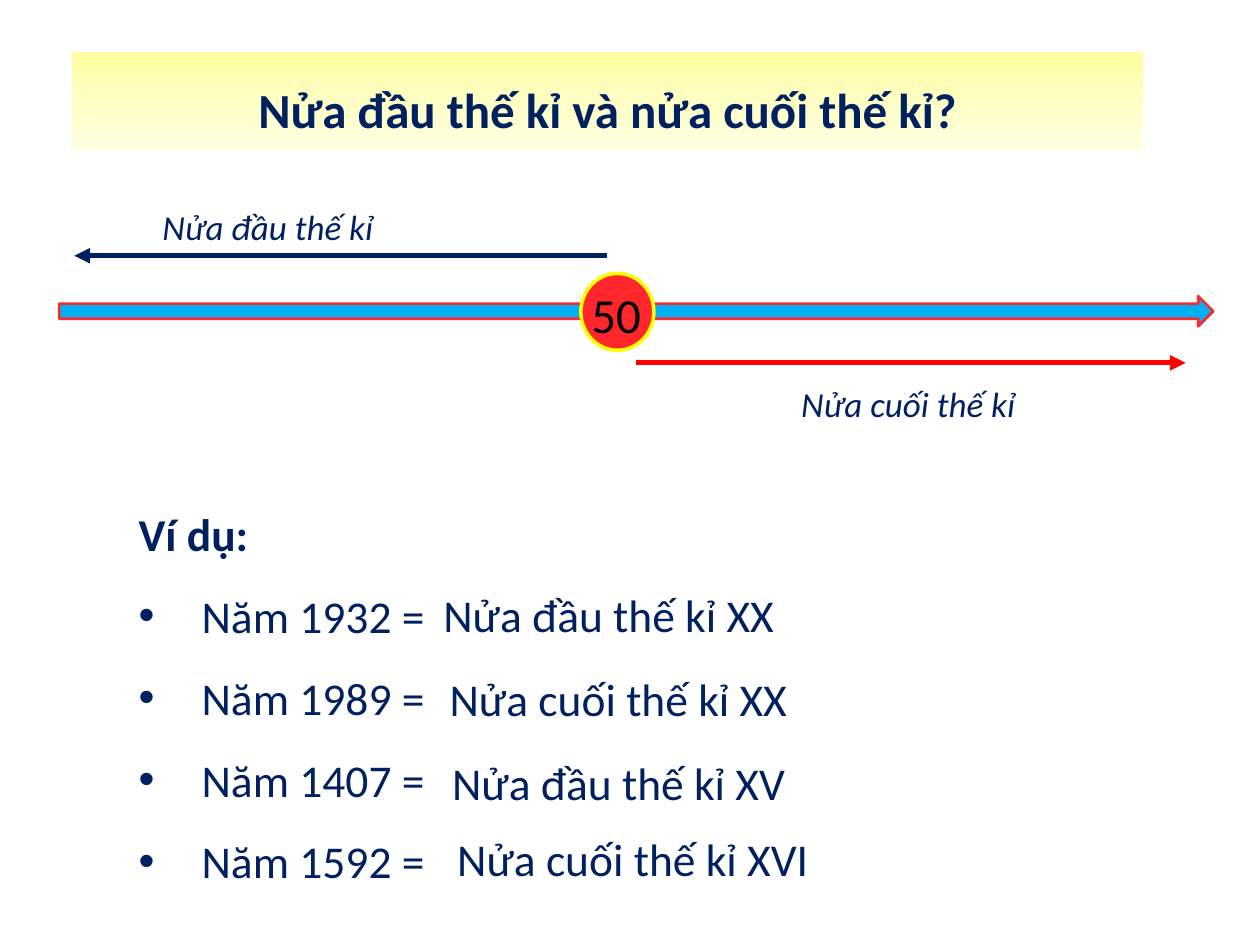
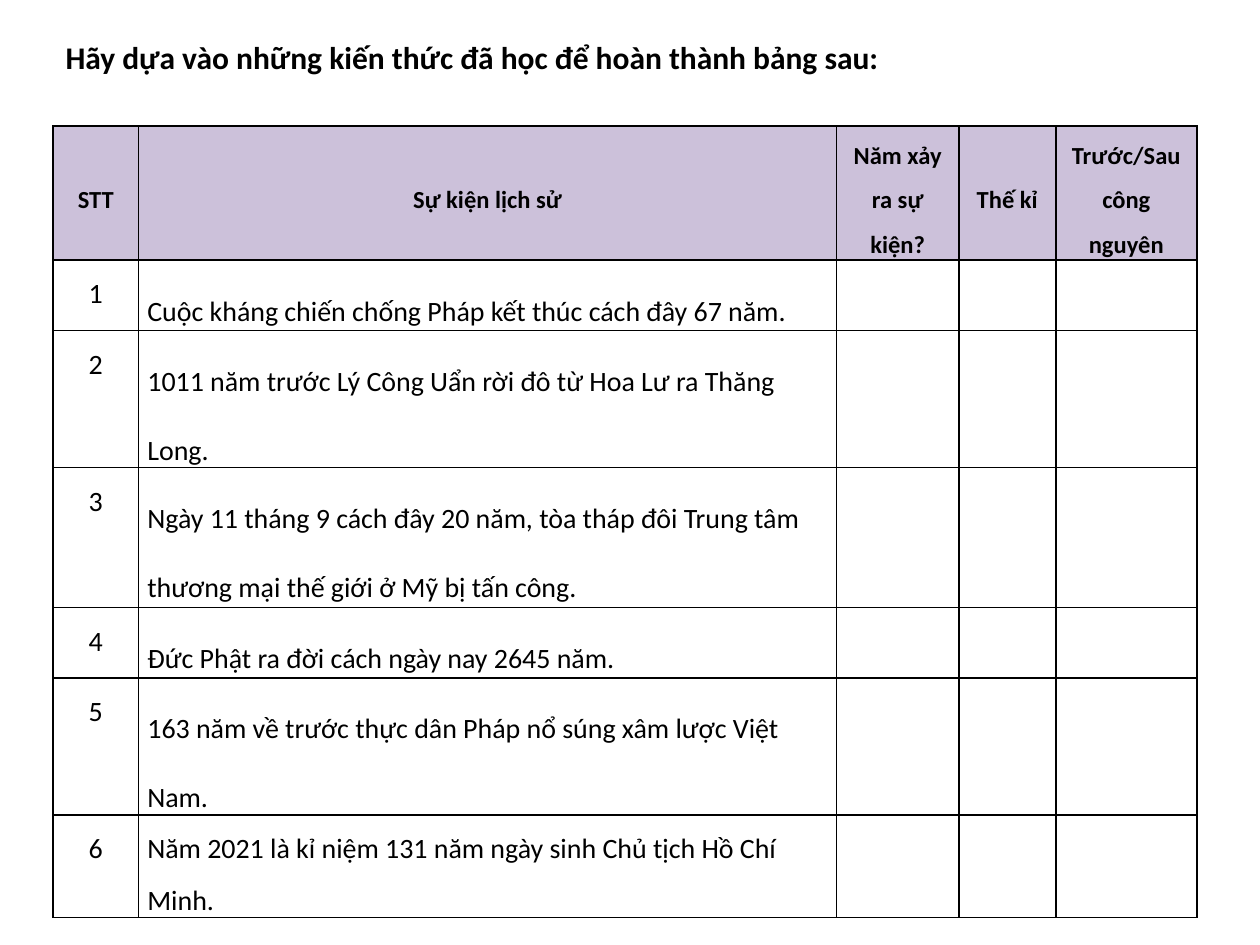
from copy import deepcopy

from pptx import Presentation
from pptx.dml.color import RGBColor
from pptx.enum.shapes import MSO_CONNECTOR as CONN, MSO_SHAPE as SHAPE
from pptx.enum.text import MSO_ANCHOR as ANCHOR, MSO_AUTO_SIZE as AUTO, PP_ALIGN as ALIGN
from pptx.oxml.ns import qn
from pptx.util import Inches, Pt
from lxml.etree import SubElement

FONT = "Calibri"
NAVY = RGBColor(0x00, 0x20, 0x60)
BLACK = RGBColor(0x00, 0x00, 0x00)
RED = RGBColor(0xFF, 0x00, 0x00)
CORAL = RGBColor(0xFF, 0x27, 0x2C)
YELLOW = RGBColor(0xFF, 0xFF, 0x00)
SKY = RGBColor(0x00, 0xB0, 0xF0)
LILAC = RGBColor(0xCC, 0xC1, 0xDA)
BAND = [(0, RGBColor(0xFF, 0xFF, 0xA0)), (0.5, RGBColor(0xFF, 0xFF, 0xC5)),
        (1, RGBColor(0xFF, 0xFF, 0xE3))]

EXAMPLES = [
    ("Năm 1932 =", "Nửa đầu thế kỉ XX", (3.42, 4.39, 2.85, 0.69)),
    ("Năm 1989 =", "Nửa cuối thế kỉ XX", (3.47, 5.06, 2.91, 0.69)),
    ("Năm 1407 =", "Nửa đầu thế kỉ XV", (3.49, 5.73, 2.87, 0.69)),
    ("Năm 1592 =", "Nửa cuối thế kỉ XVI", (3.53, 6.33, 3.02, 0.69)),
]
HEADERS = ["STT", "Sự kiện lịch sử", "Năm xảy ra sự kiện?", "Thế kỉ", "Trước/Sau công nguyên"]
EVENTS = [
    "Cuộc kháng chiến chống Pháp kết thúc cách đây 67 năm.",
    "1011 năm trước Lý Công Uẩn rời đô từ Hoa Lư ra Thăng Long.",
    "Ngày 11 tháng 9 cách đây 20 năm, tòa tháp đôi Trung tâm thương mại thế giới ở Mỹ bị tấn công.",
    "Đức Phật ra đời cách ngày nay 2645 năm.",
    "163 năm về trước thực dân Pháp nổ súng xâm lược Việt Nam.",
    "Năm 2021 là kỉ niệm 131 năm ngày sinh Chủ tịch Hồ Chí Minh.",
]
COL_WIDTHS = [0.68, 5.54, 0.97, 0.77, 1.12]
ROW_HEIGHTS = [0.72, 0.56, 0.56, 1.11, 0.56, 0.56, 0.42]


def style(p, size, color=NAVY, bold=False, italic=False, align=ALIGN.LEFT, spacing=1.0, before=0):
    """Format a paragraph and all its runs."""
    p.alignment, p.line_spacing, p.space_before = align, spacing, Pt(before)
    for r in p.runs:
        f = r.font
        f.name, f.size, f.bold, f.italic = FONT, Pt(size), bold, italic
        f.color.rgb = color


def place(sp, box):
    """Move a shape to a box given in inches."""
    sp.left, sp.top, sp.width, sp.height = map(Inches, box)


def add_title(slide, box, text, anchor, size, **look):
    """Fill, place and format the title placeholder."""
    sp = slide.shapes.title
    place(sp, box)
    tf = sp.text_frame
    tf.text = text
    tf.auto_size, tf.vertical_anchor = AUTO.NONE, anchor
    style(tf.paragraphs[0], size, bold=True, **look)
    return sp


def add_label(slide, box, text, size, **look):
    """Add a one-line text box."""
    tf = slide.shapes.add_textbox(*map(Inches, box)).text_frame
    tf.text = text
    tf.word_wrap, tf.auto_size = False, AUTO.SHAPE_TO_FIT_TEXT
    style(tf.paragraphs[0], size, **look)


def add_figure(slide, kind, box, fill, line, width):
    """Add a filled and outlined preset shape."""
    sp = slide.shapes.add_shape(kind, *map(Inches, box))
    sp.shadow.inherit = False
    sp.fill.solid()
    sp.fill.fore_color.rgb = fill
    sp.line.color.rgb, sp.line.width = line, Pt(width)


def add_arrow(slide, x1, x2, y, color):
    """Add a horizontal arrow pointing at x2."""
    cx = slide.shapes.add_connector(CONN.STRAIGHT, *map(Inches, (x1, y, x2, y)))
    cx.line.color.rgb, cx.line.width = color, Pt(3)
    SubElement(cx.line._get_or_add_ln(), qn("a:tailEnd"), type="triangle")
    SubElement(cx._element.spPr, qn("a:effectLst"))


def fill_band(sp):
    """Give a shape the vertical yellow gradient."""
    sp.fill.gradient()
    sp.fill.gradient_angle = 270
    stops = sp._element.spPr.find(qn("a:gradFill")).find(qn("a:gsLst"))
    stops.append(deepcopy(stops[0]))
    for stop, (position, color) in zip(sp.fill.gradient_stops, BAND):
        stop.position, stop.color.rgb = position, color


def add_timeline(slide, box):
    """Draw the century axis with its midpoint and two labelled halves."""
    x, y, w, h = box
    add_figure(slide, SHAPE.RIGHT_ARROW, box, SKY, CORAL, 1.5)
    add_figure(slide, SHAPE.OVAL, (x + 4.14, y - 0.18, 0.58, 0.61), CORAL, YELLOW, 2)
    add_arrow(slide, x + 4.35, x + 0.12, y - 0.32, NAVY)
    add_arrow(slide, x + 4.58, x + w - 0.22, y + h + 0.29, RED)
    add_label(slide, (x + 0.72, y - 0.77, 1.95, 0.44), "Nửa đầu thế kỉ", 20, italic=True)
    add_label(slide, (x + 5.79, y + 0.64, 1.98, 0.44), "Nửa cuối thế kỉ", 20, italic=True)
    add_label(slide, (x + 4.12, y - 0.14, 0.6, 0.57), "50", 28, color=BLACK, align=ALIGN.CENTER)


def add_examples(slide, box):
    """List the example years in the body placeholder and add their answers."""
    sp = slide.placeholders[1]
    place(sp, box)
    tf = sp.text_frame
    tf.auto_size = AUTO.NONE
    tf.text = "\n".join(["Ví dụ:"] + [year for year, _, _ in EXAMPLES])
    for i, p in enumerate(tf.paragraphs):
        style(p, 26, bold=i == 0, spacing=1.5)
        pPr = p._p.get_or_add_pPr()
        indent = Inches(0.5) if i else 0
        pPr.set("marL", str(indent))
        pPr.set("indent", str(-indent))
        if i:
            SubElement(pPr, qn("a:buFont"), typeface="Arial")
            SubElement(pPr, qn("a:buChar"), char="•")
        else:
            SubElement(pPr, qn("a:buNone"))
    for _, answer, answer_box in EXAMPLES:
        add_label(slide, answer_box, answer, 26, spacing=1.5)


def set_borders(cell):
    """Draw thin black lines on the four sides of a cell."""
    tcPr = cell._tc.get_or_add_tcPr()
    for i, side in enumerate(("lnL", "lnR", "lnT", "lnB")):
        ln = tcPr.makeelement(qn(f"a:{side}"), {"w": str(Pt(1))})
        fill = SubElement(ln, qn("a:solidFill"))
        SubElement(fill, qn("a:srgbClr"), val=str(BLACK))
        tcPr.insert(i, ln)


def add_event_table(slide, box):
    """Add the table of historical events to complete."""
    rows = [HEADERS] + [[str(n), event, "", "", ""] for n, event in enumerate(EVENTS, 1)]
    table = slide.shapes.add_table(len(rows), len(HEADERS), *map(Inches, box)).table
    table.first_row = table.horz_banding = False
    for col, width in zip(table.columns, COL_WIDTHS):
        col.width = Inches(width)
    for i, (row, height) in enumerate(zip(table.rows, ROW_HEIGHTS)):
        row.height = Inches(height)
        for j, cell in enumerate(row.cells):
            cell.text = rows[i][j]
            if i == 0:
                cell.fill.solid()
                cell.fill.fore_color.rgb = LILAC
                cell.vertical_anchor = ANCHOR.MIDDLE
            else:
                cell.fill.background()
            set_borders(cell)
            if not cell.text:
                continue
            cell.margin_left = cell.margin_right = Inches(0.07)
            cell.margin_top = cell.margin_bottom = 0
            is_event = i > 0 and j == 1
            double = is_event and i < len(EVENTS)
            style(cell.text_frame.paragraphs[0], 16 if i else 14, BLACK, bold=i == 0,
                  align=ALIGN.LEFT if is_event else ALIGN.CENTER,
                  spacing=2.0 if double else 1.5, before=0 if double else 6)


def build_century_slide(prs):
    """Build the slide on the two halves of a century."""
    slide = prs.slides.add_slide(prs.slide_layouts[1])
    title = add_title(slide, (0.57, 0.41, 8.5, 0.79), "Nửa đầu thế kỉ và nửa cuối thế kỉ?",
                      ANCHOR.MIDDLE, 28, align=ALIGN.CENTER, spacing=1.25)
    fill_band(title)
    add_timeline(slide, (0.47, 2.35, 9.16, 0.24))
    add_examples(slide, (1, 3.75, 8.84, 3.38))


def build_exercise_slide(prs):
    """Build the slide with the table to fill in."""
    slide = prs.slides.add_slide(prs.slide_layouts[5])
    add_title(slide, (0.42, 0.25, 9.08, 0.4),
              "Hãy dựa vào những kiến thức đã học để hoàn thành bảng sau:",
              ANCHOR.TOP, 18, color=BLACK)
    add_event_table(slide, (0.42, 1, 9.08, 6.21))


def main():
    """Build and save the presentation."""
    prs = Presentation()
    prs.slide_width, prs.slide_height = Inches(10), Inches(7.5)
    build_century_slide(prs)
    build_exercise_slide(prs)
    prs.save("out.pptx")


if __name__ == "__main__":
    main()
